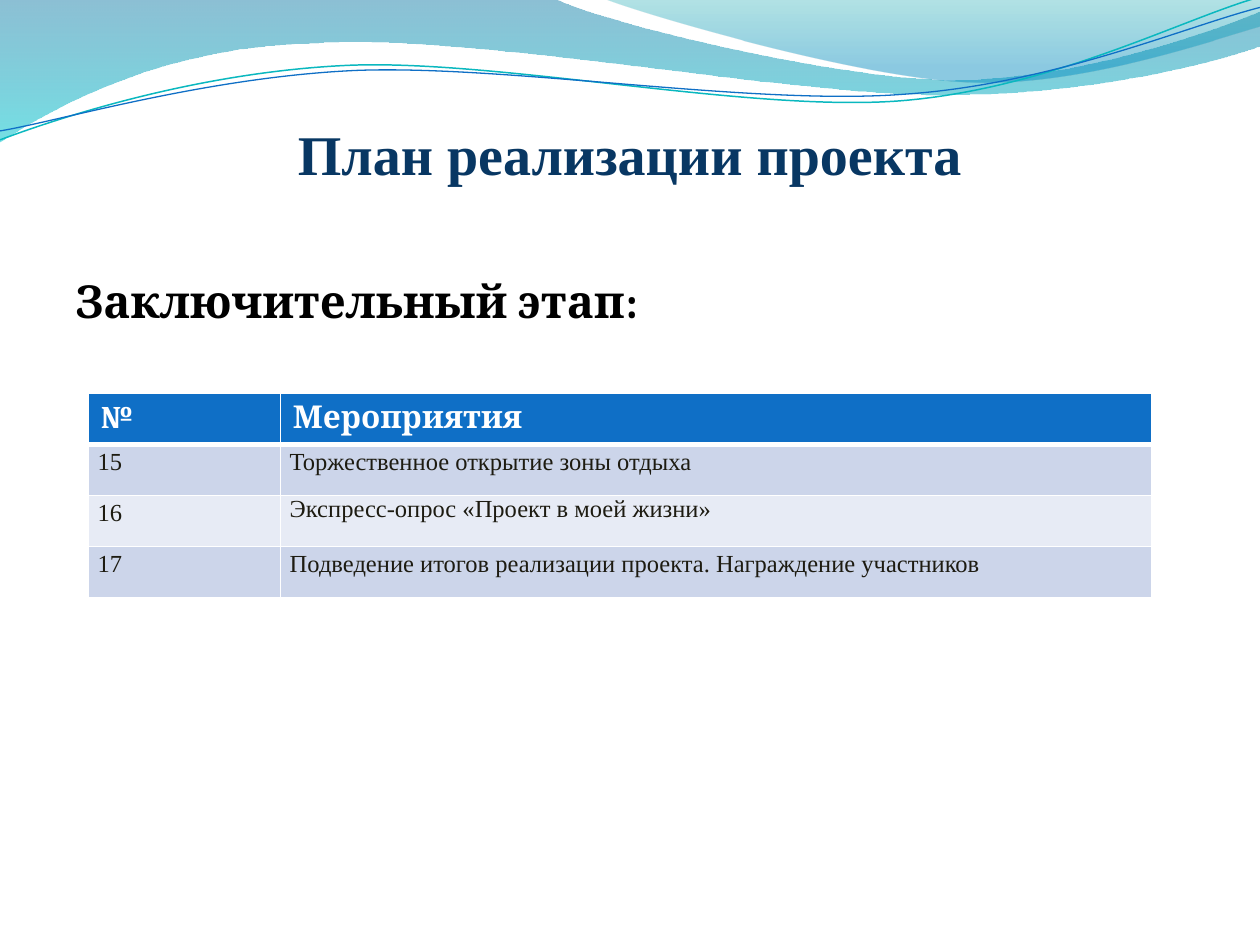
from itertools import cycle

from pptx import Presentation
from pptx.dml.color import RGBColor
from pptx.enum.text import MSO_ANCHOR as Anchor, PP_ALIGN as Align
from pptx.oxml import parse_xml
from pptx.oxml.ns import nsdecls, qn
from pptx.util import Cm, Pt

NAVY = RGBColor(0x08, 0x37, 0x63)
BLUE = RGBColor(0x0F, 0x6F, 0xC6)
TEAL = RGBColor(0x0A, 0xB8, 0xBF)
BLACK = RGBColor(0, 0, 0)
WHITE = RGBColor(0xFF, 0xFF, 0xFF)
INK = RGBColor(0x1D, 0x1B, 0x11)
ROW_DARK = RGBColor(0xCC, 0xD5, 0xEA)
ROW_LIGHT = RGBColor(0xE7, 0xEB, 0xF5)
BAND_TOP = RGBColor(0x00, 0x74, 0xA1)
BAND_BOTTOM = RGBColor(0x00, 0xC6, 0xCF)
FOLD_TOP = RGBColor(0x00, 0xA1, 0xA9)
FOLD_BOTTOM = RGBColor(0x00, 0x8B, 0xBF)

TITLE_FONT = dict(name="Times New Roman", size=Pt(32), bold=True)
STAGE_FONT = dict(name="Cambria", size=Pt(26), bold=True)
HEAD_FONT = dict(name="Cambria", size=Pt(18), bold=True)
CELL_FONT = dict(name="Times New Roman", size=Pt(14), bold=False)
HEAD_BORDERS = dict(lnL=1, lnR=1, lnT=1, lnB=3)

# Outlines in cm: one pair is a straight step, three pairs are a Bezier curve.
BAND = [[(0, 0)], [(11.18, -0.03)],
        [(12.09, 0.43), (16.87, 1.6), (19.25, 1.6)],
        [(21.67, 1.6), (24.33, 0.66), (25.4, 0.23)], [(25.43, 0.91)],
        [(24.97, 1.12), (22.1, 1.93), (18.95, 1.91)],
        [(15.8, 1.91), (9.7, 0.71), (6.53, 0.86)],
        [(3.28, 0.91), (1.17, 2.11), (-0.03, 2.87)]]
FOLD = [[(12.17, -0.03)],
        [(12.93, 0.28), (17.32, 1.57), (19.53, 1.65)],
        [(21.74, 1.75), (24.41, 0.81), (25.4, 0.53)], [(25.4, 0)]]
TEAL_WAVE = [[(-0.05, 2.22)],
             [(1.19, 1.82), (4.02, 1.04), (7.05, 1.05)],
             [(10.05, 1.07), (15.02, 2.37), (18.08, 2.29)],
             [(21.13, 2.2), (23.87, 0.91), (25.41, 0.55)]]
BLUE_WAVE = [[(-0.04, 2.04)],
             [(1.16, 1.9), (4.18, 1.15), (7.2, 1.16)],
             [(10.25, 1.19), (15.13, 2.25), (18.19, 2.16)],
             [(21.21, 2.1), (23.93, 1.06), (25.45, 0.75)]]
WAVE_TILT = -2.7

ROWS = [("№", "Мероприятия"),
        ("15", "Торжественное открытие зоны отдыха"),
        ("16", "Экспресс-опрос «Проект в моей жизни»"),
        ("17", "Подведение итогов реализации проекта. Награждение участников")]


def set_values(target, values):
    for key, value in values.items():
        setattr(target, key, value)


def write(frame, text, font, color, **para_format):
    para = frame.paragraphs[0]
    set_values(para, para_format)
    span = para.add_run()
    span.text = text
    set_values(span.font, font)
    span.font.color.rgb = color


def add_outline(page, left, top, outline, close):
    """Draw straight steps between the nodes, then bend those that are curves."""
    steps = [[(left + Cm(x), top + Cm(y)) for x, y in step] for step in outline]
    builder = page.shapes.build_freeform(*steps[0][0])
    builder.add_line_segments([step[-1] for step in steps[1:]], close=close)
    shape = builder.convert_to_shape()
    shape.shadow.inherit = False
    lines = list(shape._element.iter(qn("a:lnTo")))
    for line, step in zip(lines, steps[1:]):
        if len(step) == 3:
            points = "".join(f'<a:pt x="{x - shape.left}" y="{y - shape.top}"/>'
                             for x, y in step)
            line.getparent().replace(line, parse_xml(
                f'<a:cubicBezTo {nsdecls("a")}>{points}</a:cubicBezTo>'))
    return shape


def add_veil(page, left, top, outline, stops):
    """Add a translucent area; stops hold position, colour and opacity in percent."""
    shape = add_outline(page, left, top, outline, True)
    shape.line.fill.background()
    shape.fill.gradient()
    marks = "".join(
        f'<a:gs pos="{place * 1000}"><a:srgbClr val="{color}">'
        f'<a:alpha val="{opacity * 1000}"/></a:srgbClr></a:gs>'
        for place, color, opacity in stops)
    properties = shape._element.spPr
    properties.replace(properties.find(qn("a:gradFill")), parse_xml(
        f'<a:gradFill {nsdecls("a")} rotWithShape="1"><a:gsLst>{marks}</a:gsLst>'
        '<a:lin ang="5400000" scaled="0"/></a:gradFill>'))


def add_wave(page, left, top, outline, color, width):
    shape = add_outline(page, left, top, outline, False)
    shape.rotation = WAVE_TILT
    shape.fill.background()
    shape.line.color.rgb = color
    shape.line.width = Pt(width)


def add_header_art(page, left, top):
    add_veil(page, left, top, BAND, [(0, BAND_TOP, 45), (100, BAND_BOTTOM, 55)])
    add_veil(page, left, top, FOLD, [(0, FOLD_TOP, 30), (80, FOLD_BOTTOM, 45)])
    add_wave(page, left, top, TEAL_WAVE, TEAL, 0.85)
    add_wave(page, left, top, BLUE_WAVE, BLUE, 0.75)


def place_title(page, left, top, width, height):
    title = page.shapes.title
    set_values(title, dict(left=left, top=top, width=width, height=height))
    frame = title.text_frame
    set_values(frame, dict(margin_left=0, margin_right=0, margin_bottom=0,
                           vertical_anchor=Anchor.BOTTOM))
    write(frame, "План реализации проекта", TITLE_FONT, NAVY, alignment=Align.CENTER)
    page.shapes._spTree.append(title._element)  # in front of the header art


def add_stage(page, left, top, width, height):
    frame = page.shapes.add_textbox(left, top, width, height).text_frame
    frame.word_wrap = True
    write(frame, "Заключительный этап:", STAGE_FONT, BLACK)


def fill_cell(cell, color):
    cell.fill.solid()
    cell.fill.fore_color.rgb = color


def add_borders(cell, borders):
    properties = cell._tc.get_or_add_tcPr()
    for index, (side, width) in enumerate(borders.items()):
        properties.insert(index, parse_xml(
            f'<a:{side} {nsdecls("a")} w="{Pt(width)}"><a:solidFill>'
            f'<a:srgbClr val="{WHITE}"/></a:solidFill></a:{side}>'))


def add_plan(page, left, top, width, height):
    table = page.shapes.add_table(len(ROWS), 2, left, top, width, height).table
    number_width = Cm(3.87)
    table.columns[0].width = number_width
    table.columns[1].width = width - number_width
    for cell, text in zip(table.rows[0].cells, ROWS[0]):
        fill_cell(cell, BLUE)
        add_borders(cell, HEAD_BORDERS)
        write(cell.text_frame, text, HEAD_FONT, WHITE)
    body_rows = list(table.rows)[1:]
    for row, texts, color in zip(body_rows, ROWS[1:], cycle((ROW_DARK, ROW_LIGHT))):
        for cell, text in zip(row.cells, texts):
            fill_cell(cell, color)
            set_values(cell, dict(margin_left=Cm(0.19), margin_right=Cm(0.19),
                                  margin_top=0, margin_bottom=0))
            write(cell.text_frame, text, CELL_FONT, INK,
                  alignment=Align.JUSTIFY, line_spacing=1.15)
    table.cell(2, 1).text_frame.paragraphs[0].line_spacing = 1.0


def main():
    deck = Presentation()
    deck.slide_width, deck.slide_height = Cm(25.4), Cm(19.05)
    page = deck.slides.add_slide(deck.slide_layouts[5])
    add_header_art(page, 0, 0)
    place_title(page, Cm(1.27), Cm(1.96), Cm(22.86), Cm(1.8))
    add_stage(page, Cm(1.27), Cm(5.38), Cm(22.86), Cm(12.19))
    add_plan(page, Cm(1.78), Cm(7.93), Cm(21.43), Cm(4.12))
    deck.save("out.pptx")


if __name__ == "__main__":
    main()
